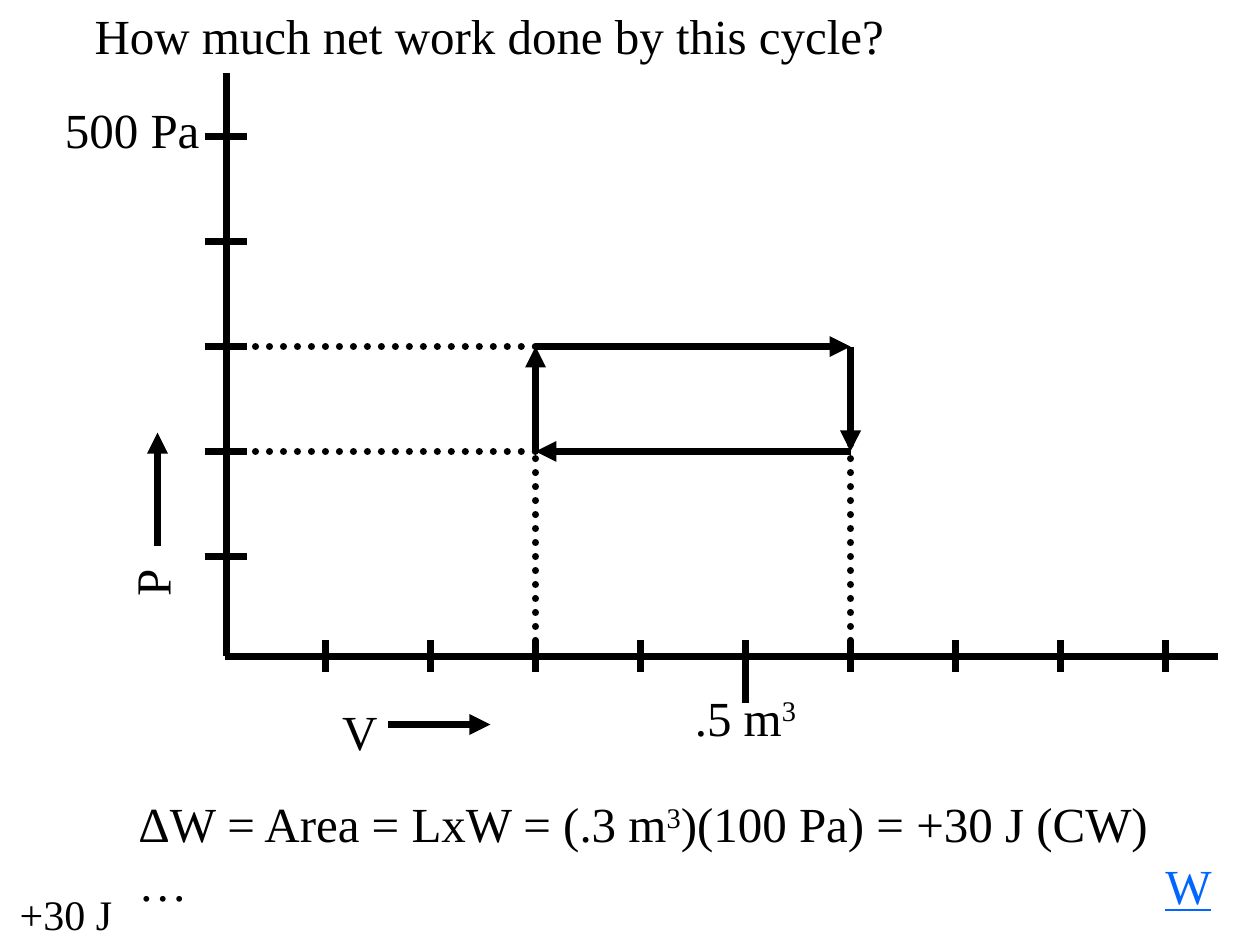
from pptx import Presentation
from pptx.dml.color import RGBColor
from pptx.enum.dml import MSO_LINE
from pptx.enum.shapes import MSO_CONNECTOR
from pptx.enum.text import MSO_ANCHOR, MSO_AUTO_SIZE, PP_ALIGN
from pptx.oxml.ns import qn
from pptx.util import Pt
from lxml import etree

PX = 7620
COLORS = {"ink": "000000", "link": "0066FF"}
FONT = "Times New Roman"
STRAIGHT = MSO_CONNECTOR.STRAIGHT
DOTTED = MSO_LINE.ROUND_DOT
LEFT, TOP = PP_ALIGN.LEFT, MSO_ANCHOR.TOP
NO_FIT = MSO_AUTO_SIZE.NONE

STEP = 100
AXIS_X, AXIS_Y = 216, 625
VOLUME_TICKS = [310 + STEP * i for i in range(9)]
PRESSURE_TICKS = [130 + STEP * i for i in range(5)]
LOW_V, HIGH_V = VOLUME_TICKS[2], VOLUME_TICKS[5]
HIGH_P, LOW_P = PRESSURE_TICKS[2], PRESSURE_TICKS[3]


def format_text(box, paragraphs, size=28, color="ink", underline=None, wrap=False):
    """Fill a box with paragraphs whose every second piece is superscript."""
    frame = box.text_frame
    frame.auto_size = NO_FIT
    frame.word_wrap = wrap
    frame.vertical_anchor = TOP
    for index, pieces in enumerate(paragraphs):
        paragraph = frame.add_paragraph() if index else frame.paragraphs[0]
        paragraph.alignment = LEFT
        for position, piece in enumerate(pieces):
            run = paragraph.add_run()
            run.text = piece
            font = run.font
            font.name, font.size, font.underline = FONT, Pt(size), underline
            font.color.rgb = RGBColor.from_string(COLORS[color])
            if position % 2:
                run._r.get_or_add_rPr().set("baseline", "30000")


def place(box, left, top, width, height):
    """Set the position and size of a box in px."""
    box.left, box.top = left * PX, top * PX
    box.width, box.height = width * PX, height * PX


def add_label(slide, bounds, paragraphs, rotation=0, **style):
    """Add a text box, optionally rotated."""
    label = slide.shapes.add_textbox(*(length * PX for length in bounds))
    label.rotation = rotation
    format_text(label, paragraphs, **style)


def add_line(slide, x1, y1, x2, y2, arrow=False, dotted=False):
    """Draw a straight line with an optional arrowhead or round dots."""
    line = slide.shapes.add_connector(STRAIGHT, x1 * PX, y1 * PX, x2 * PX, y2 * PX)
    line.line.width = Pt(4)
    line.line.color.rgb = RGBColor.from_string(COLORS["ink"])
    outline = line.get_or_add_ln()
    if dotted:
        line.line.dash_style = DOTTED
        outline.set("cap", "rnd")
    if arrow:
        etree.SubElement(outline, qn("a:tailEnd"), type="triangle")
    etree.SubElement(line._element.spPr, qn("a:effectLst"))


def add_axes(slide):
    """Draw the pressure and volume axes with ticks and labels."""
    add_line(slide, AXIS_X, 70, AXIS_X, AXIS_Y)
    add_line(slide, AXIS_X - 2, AXIS_Y, 1160, AXIS_Y)
    for y in PRESSURE_TICKS:
        add_line(slide, 195, y, 235, y)
    for x in VOLUME_TICKS:
        add_line(slide, x, 610, x, 640)
    add_line(slide, VOLUME_TICKS[4], 610, VOLUME_TICKS[4], 670)
    add_line(slide, 370, 690, 467, 690, arrow=True)
    add_line(slide, 150, 520, 150, 412, arrow=True)
    add_label(slide, (314, 662, 58, 68), [["V"]])
    add_label(slide, (119, 521, 50, 68), [["P"]], rotation=270)
    add_label(slide, (50, 89, 152, 68), [["500 Pa"]])
    add_label(slide, (650, 649, 122, 68), [[".5 m", "3"]])


def add_cycle(slide):
    """Draw the clockwise cycle and its dotted guides to the axes."""
    for y in (LOW_P, HIGH_P):
        add_line(slide, 230, y, LOW_V, y, dotted=True)
    add_line(slide, LOW_V, 610, LOW_V, LOW_P, dotted=True)
    add_line(slide, HIGH_V, 610, HIGH_V, 350, dotted=True)
    corners = [(LOW_V, LOW_P), (LOW_V, HIGH_P), (HIGH_V, HIGH_P), (HIGH_V, LOW_P)]
    for start, end in zip(corners, corners[1:] + corners[:1]):
        add_line(slide, *start, *end, arrow=True)


def main():
    """Build the slide and save it."""
    deck = Presentation()
    deck.slide_width, deck.slide_height = 1200 * PX, 900 * PX
    slide = deck.slides.add_slide(deck.slide_layouts[5])
    question = slide.shapes.title
    place(question, 78, -1, 776, 68)
    format_text(question, [["How much net work done by this cycle?"]])
    add_axes(slide)
    add_cycle(slide)
    solution = [["ΔW = Area = LxW = (.3 m", "3", ")(100 Pa) = +30 J (CW)"], ["…"]]
    add_label(slide, (120, 750, 1030, 124), solution, wrap=True)
    add_label(slide, (1098, 809, 68, 68), [["W"]], color="link", underline=True)
    add_label(slide, (7, 840, 113, 60), [["+30 J"]], size=24)
    deck.save("out.pptx")


if __name__ == "__main__":
    main()
